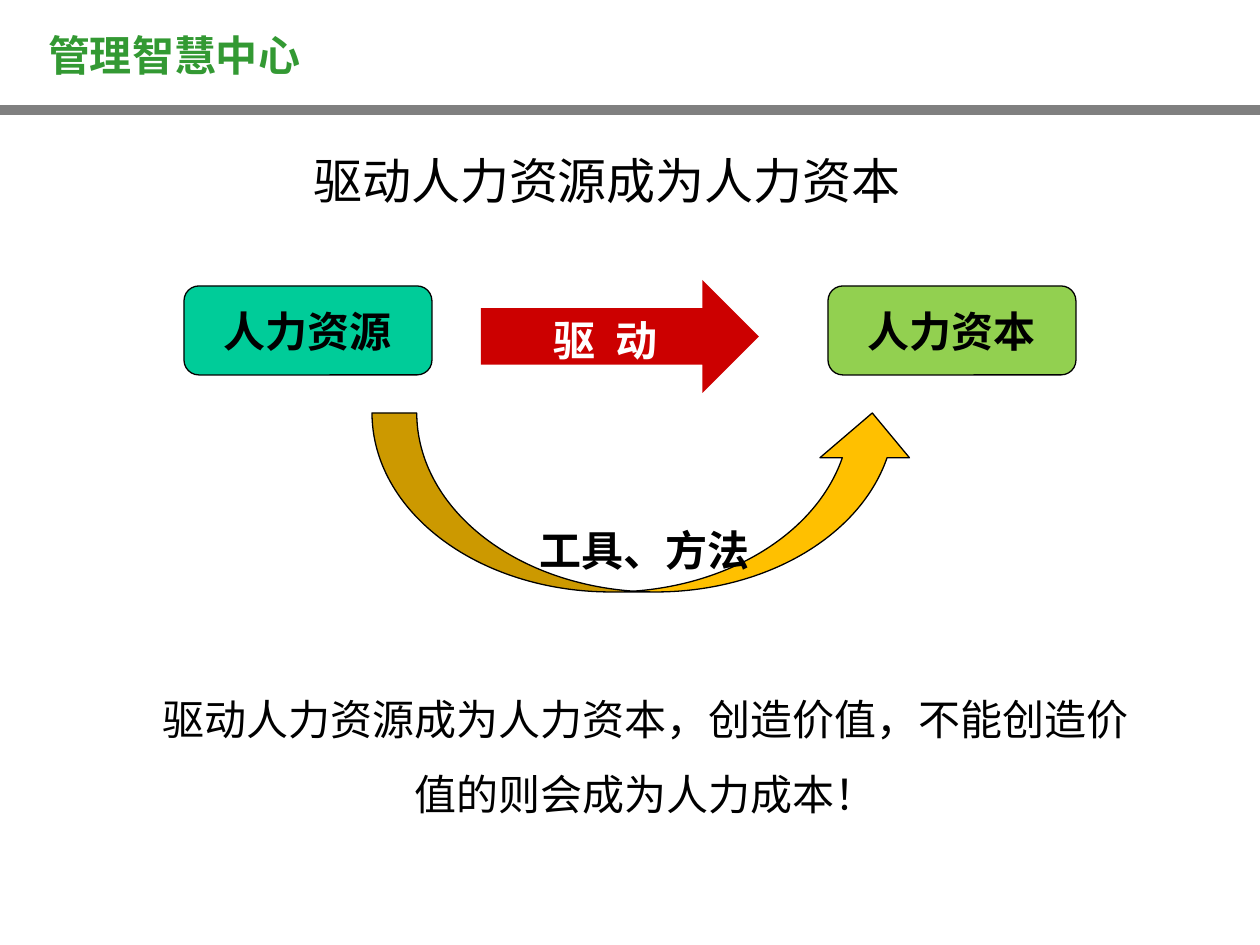
"""Build the slide on driving human resources into human capital."""
from dataclasses import dataclass

from lxml.etree import SubElement
from pptx import Presentation
from pptx.dml.color import RGBColor
from pptx.enum.shapes import MSO_SHAPE
from pptx.enum.text import MSO_ANCHOR, PP_ALIGN
from pptx.oxml.ns import qn
from pptx.util import Emu, Pt

PX = 914400 / 126
CJK = "Noto Sans CJK SC"
LATIN = "Times New Roman"


@dataclass
class Box:
    x: int
    y: int
    w: int
    h: int


@dataclass
class Label:
    text: str
    size: int = 24
    font: str = LATIN
    color: str = "000000"
    bold: bool = True
    align: PP_ALIGN = PP_ALIGN.CENTER
    anchor: MSO_ANCHOR = MSO_ANCHOR.MIDDLE
    spacing: float = 1.0
    tracking: int = 0


@dataclass
class Block:
    kind: MSO_SHAPE
    box: Box
    fill: str
    label: Label | None = None
    outlined: bool = True


def px(n: int) -> Emu:
    return Emu(round(n * PX))


def rgb(color: str) -> RGBColor:
    return RGBColor.from_string(color)


def place(box: Box) -> tuple[Emu, ...]:
    return px(box.x), px(box.y), px(box.w), px(box.h)


def write(tf, label: Label) -> None:
    tf.text = label.text
    tf.vertical_anchor = label.anchor
    p = tf.paragraphs[0]
    p.alignment = label.align
    p.line_spacing = label.spacing
    r = p.runs[0]
    r.font.size = Pt(label.size)
    r.font.bold = label.bold
    r.font.name = label.font
    r.font.color.rgb = rgb(label.color)
    rPr = r._r.get_or_add_rPr()
    SubElement(rPr, qn("a:ea")).set("typeface", CJK)
    if label.tracking:
        rPr.set("spc", str(label.tracking))


def draw_block(slide, block: Block):
    sp = slide.shapes.add_shape(block.kind, *place(block.box))
    sp.shadow.inherit = False
    sp.fill.solid()
    sp.fill.fore_color.rgb = rgb(block.fill)
    if block.outlined:
        sp.line.color.rgb = rgb("000000")
        sp.line.width = Pt(0.75)
    else:
        sp.line.fill.background()
    if block.label:
        write(sp.text_frame, block.label)
    return sp


def draw_text(slide, box: Box, label: Label, wrap: bool = True):
    sp = slide.shapes.add_textbox(*place(box))
    sp.text_frame.word_wrap = wrap
    write(sp.text_frame, label)
    return sp


def main() -> None:
    prs = Presentation()
    prs.slide_width, prs.slide_height = px(1260), px(945)
    s = prs.slides.add_slide(prs.slide_layouts[6])

    draw_block(s, Block(MSO_SHAPE.FLOWCHART_PROCESS, Box(0, 105, 1260, 10),
                        "808080", outlined=False))
    header = draw_text(s, Box(0, 0, 976, 105),
                       Label("管理智慧中心", font=CJK, color="339933", align=PP_ALIGN.LEFT))
    tf = header.text_frame
    tf.margin_left, tf.margin_top = px(48), px(5)
    tf.margin_right = tf.margin_bottom = 0

    for x, fill, text in ((184, "00CC99", "人力资源"), (828, "92D050", "人力资本")):
        draw_block(s, Block(MSO_SHAPE.ROUNDED_RECTANGLE, Box(x, 286, 248, 89),
                            fill, Label(text)))

    tools = draw_block(s, Block(MSO_SHAPE.CURVED_UP_ARROW, Box(372, 413, 545, 179), "FFC000",
                                Label("工具、方法", anchor=MSO_ANCHOR.BOTTOM)))
    tools.text_frame.margin_bottom = px(17)
    draw_block(s, Block(MSO_SHAPE.RIGHT_ARROW, Box(481, 280, 278, 113), "CC0000",
                        Label("驱 动", color="FFFFFF", anchor=MSO_ANCHOR.TOP, tracking=300),
                        outlined=False))

    draw_text(s, Box(301, 144, 619, 72),
              Label("驱动人力资源成为人力资本", size=28, font=CJK, bold=False,
                    align=PP_ALIGN.LEFT, anchor=MSO_ANCHOR.TOP), wrap=False)
    draw_text(s, Box(149, 662, 993, 165),
              Label("驱动人力资源成为人力资本，创造价值，不能创造价值的则会成为人力成本！",
                    font=CJK, bold=False, anchor=MSO_ANCHOR.TOP, spacing=1.5))
    prs.save("out.pptx")


if __name__ == "__main__":
    main()
